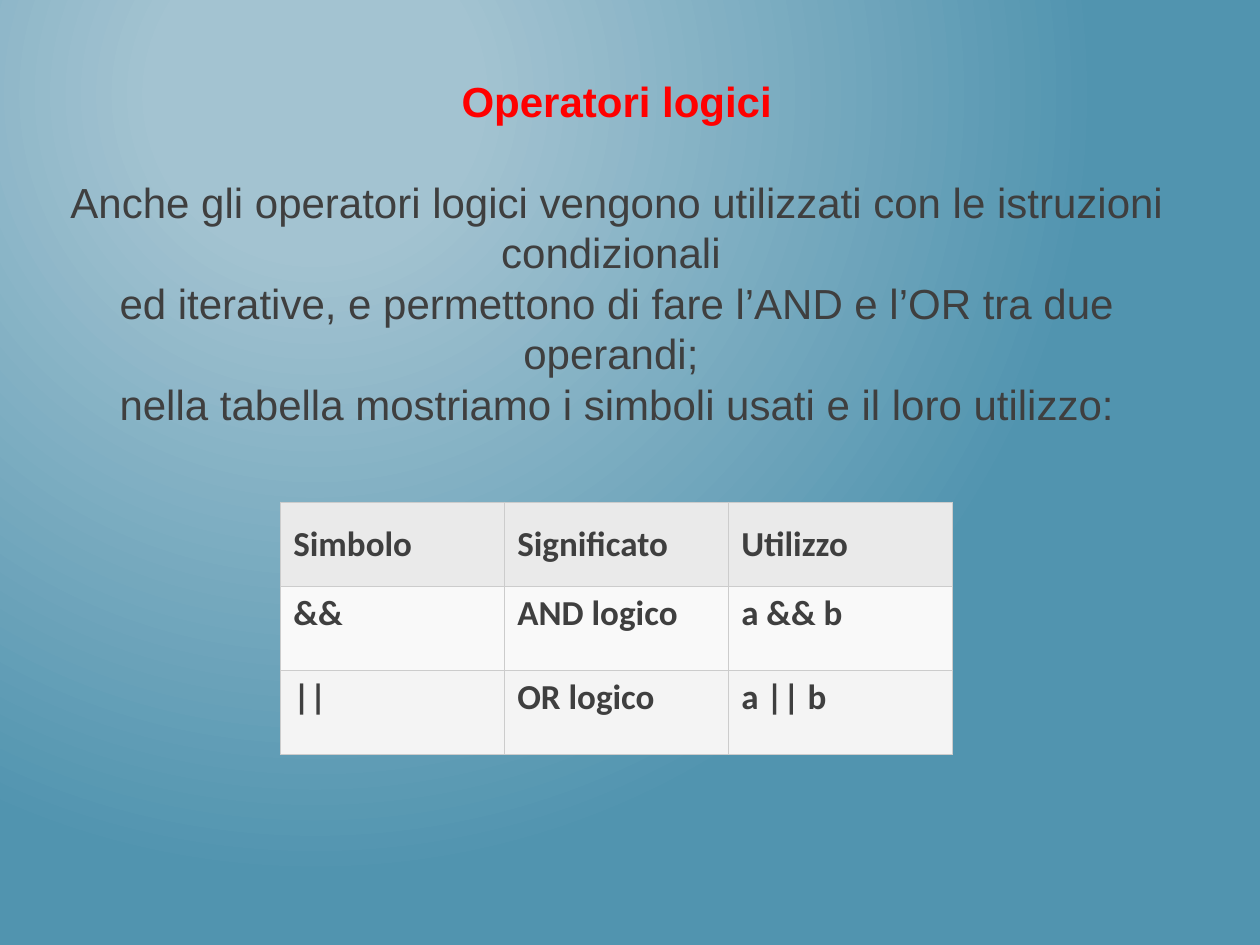
"""Build the slide on logical operators."""
from dataclasses import dataclass

from pptx import Presentation
from pptx.dml.color import RGBColor as RGB
from pptx.enum.text import MSO_ANCHOR as Anchor, MSO_AUTO_SIZE as AutoSize, PP_ALIGN as Align
from pptx.oxml.ns import qn
from pptx.oxml.xmlchemy import OxmlElement as Element
from pptx.util import Pt


@dataclass(frozen=True)
class Theme:
    glow: str = "A3C3D1"
    base: str = "5194AF"
    accent: str = "FF0000"
    ink: str = "3F3F3F"
    border: str = "CCCCCC"
    row_fills: tuple = ("EAEAEA", "F9F9F9", "F4F4F4")
    text_font: str = "Arial"
    table_font: str = "Calibri"
    text_size: float = 24
    table_size: float = 20
    leading: float = 28.8
    border_width: float = 0.75


THEME = Theme()
LEFT, WIDTH = 15.84, 673.2
TITLE = "Operatori logici"
BODY = (
    "Anche gli operatori logici vengono utilizzati con le istruzioni condizionali ",
    "ed iterative, e permettono di fare l’AND e l’OR tra due operandi; ",
    "nella tabella mostriamo i simboli usati e il loro utilizzo:",
)
OPERATORS = (
    ("Simbolo", "Significato", "Utilizzo"),
    ("&&", "AND logico", "a && b"),
    ("||", "OR logico", "a || b"),
)


def add_child(parent, tag, **attrs):
    child = Element(tag)
    for name, value in attrs.items():
        child.set(name, str(value))
    parent.append(child)
    return child


def add_run(p, text, font, size, color, bold):
    r = p.add_run()
    r.text = text
    r.font.name, r.font.size, r.font.bold = font, Pt(size), bold
    r.font.color.rgb = RGB.from_string(color)


def set_background(s):
    fill = s.background.fill
    fill.gradient()
    for stop, position, color in zip(fill.gradient_stops, (0.2, 1), (THEME.glow, THEME.base)):
        stop.position = position
        stop.color.rgb = RGB.from_string(color)
    linear = s.element.find(".//" + qn("a:lin"))
    gradient = linear.getparent()
    gradient.remove(linear)
    circle = add_child(gradient, "a:path", path="circle")
    add_child(circle, "a:fillToRect", l=50000, t=20000, r=100000, b=100000)


def fill_placeholder(sp, top, lines, color, bold):
    sp.left, sp.top, sp.width = Pt(LEFT), Pt(top), Pt(WIDTH)
    sp.height = Pt(THEME.leading * (5 if len(lines) > 1 else 1))
    tf = sp.text_frame
    tf.word_wrap, tf.auto_size, tf.vertical_anchor = True, AutoSize.NONE, Anchor.TOP
    tf.margin_left = tf.margin_right = tf.margin_top = tf.margin_bottom = 0
    for i, line in enumerate(lines):
        p = tf.add_paragraph() if i else tf.paragraphs[0]
        p.alignment, p.line_spacing, p.space_before = Align.CENTER, Pt(THEME.leading), Pt(0)
        props = p._p.get_or_add_pPr()
        props.set("marL", "0")
        props.set("indent", "0")
        add_child(props, "a:buNone")
        add_run(p, line, THEME.text_font, THEME.text_size, color, bold)


def format_cell(cell, text, fill, anchor):
    cell.vertical_anchor = anchor
    props = cell._tc.get_or_add_tcPr()
    for side in ("L", "R", "T", "B"):
        line = add_child(props, f"a:ln{side}", w=Pt(THEME.border_width))
        add_child(add_child(line, "a:solidFill"), "a:srgbClr", val=THEME.border)
    cell.fill.solid()
    cell.fill.fore_color.rgb = RGB.from_string(fill)
    p = cell.text_frame.paragraphs[0]
    add_run(p, text, THEME.table_font, THEME.table_size, THEME.ink, True)


def add_operator_table(s, rows, left, top, col_width, row_height):
    n_rows, n_cols = len(rows), len(rows[0])
    table = s.shapes.add_table(n_rows, n_cols, Pt(left), Pt(top),
                               Pt(col_width * n_cols), Pt(row_height * n_rows)).table
    table.first_row = table.horz_banding = False
    for i, (row, fill) in enumerate(zip(rows, THEME.row_fills)):
        for j, text in enumerate(row):
            anchor = Anchor.TOP if i else Anchor.MIDDLE
            format_cell(table.cell(i, j), text, fill, anchor)


def main():
    prs = Presentation()
    prs.slide_width, prs.slide_height = Pt(720), Pt(540)
    s = prs.slides.add_slide(prs.slide_layouts[1])
    set_background(s)
    add_operator_table(s, OPERATORS, left=160.4, top=287, col_width=128, row_height=48)
    fill_placeholder(s.shapes.title, 43.2, (TITLE,), THEME.accent, True)
    fill_placeholder(s.placeholders[1], 100.8, BODY, THEME.ink, False)
    prs.save("out.pptx")


if __name__ == "__main__":
    main()
